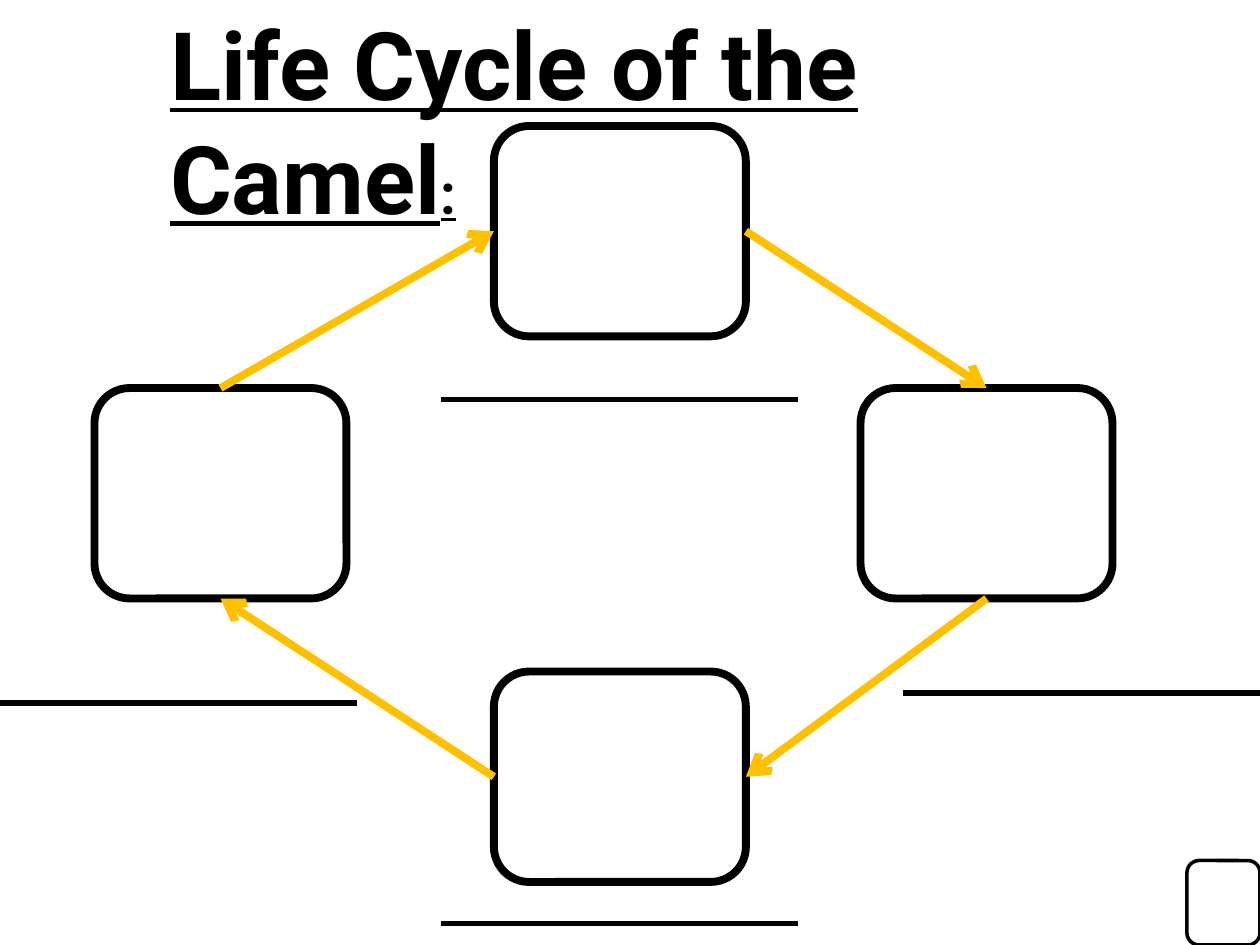
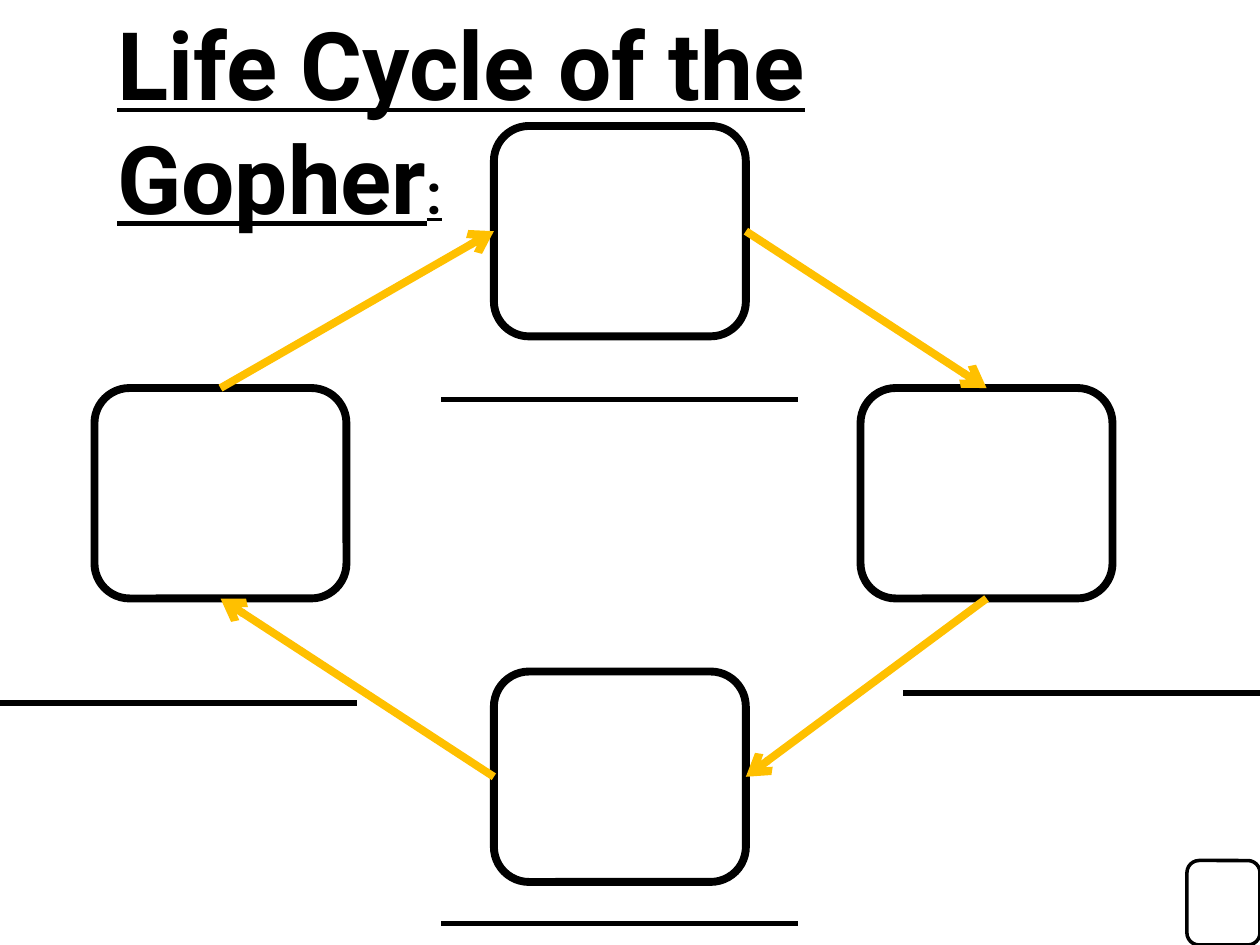
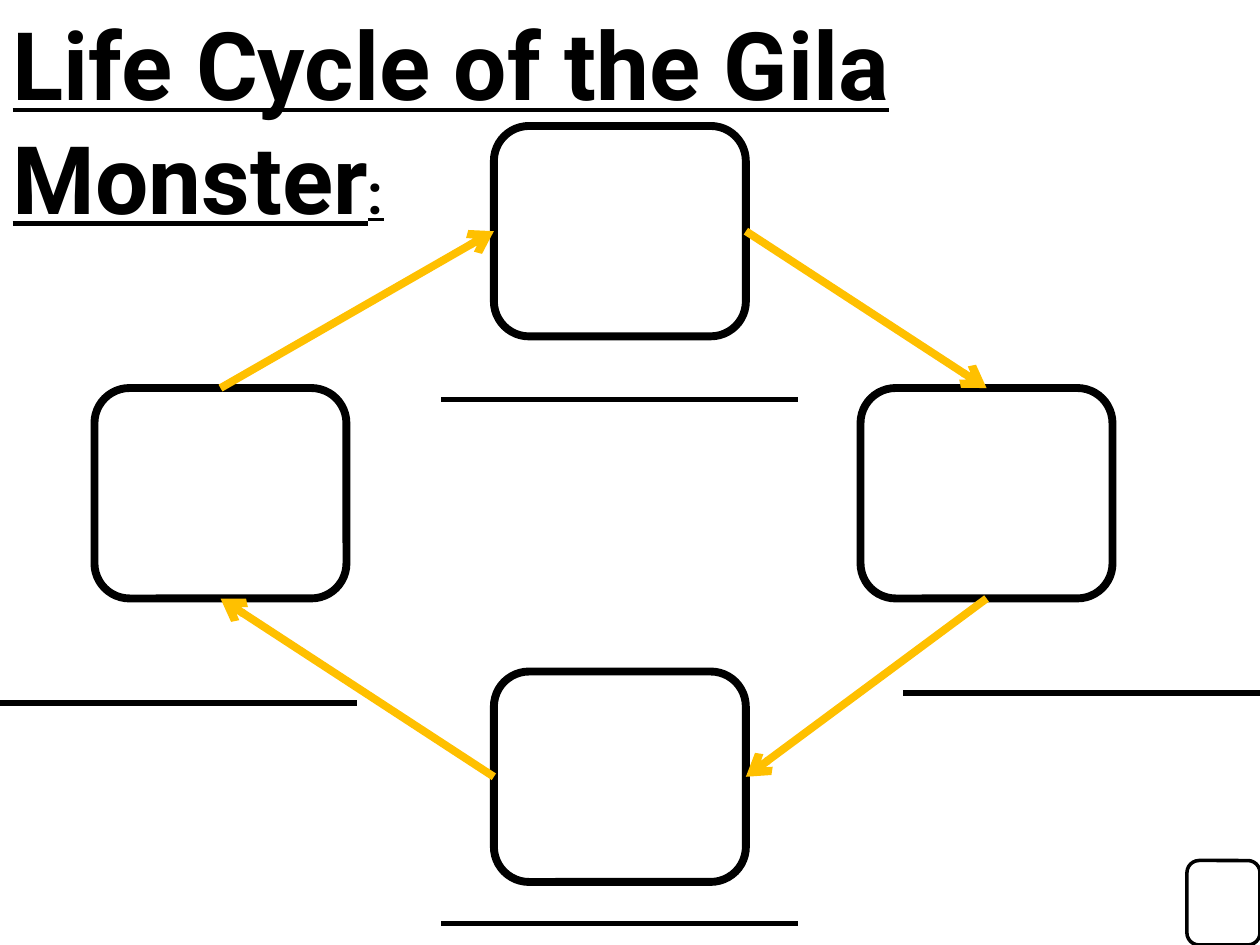
from pptx import Presentation
from pptx.dml.color import RGBColor
from pptx.enum.shapes import MSO_CONNECTOR, MSO_SHAPE
from pptx.enum.text import MSO_ANCHOR, MSO_AUTO_SIZE, PP_ALIGN
from pptx.oxml.ns import qn
from pptx.util import Inches, Pt
from lxml import etree

# Shared style
FONT = "Roboto"
BLACK, WHITE, GOLD = "000000", "FFFFFF", "FFC000"
BOX_W, BOX_H = 2, 1.67
TOP, LEFT, BOTTOM, RIGHT = range(4)  # connection sites of a rounded rectangle

# Title text, left edge and width of the title
TITLES = [
    ("Life Cycle of the Camel", 1.25, 7.72),
    ("Life Cycle of the Gopher", 0.83, 8.2),
    ("Life Cycle of the Gila Monster", 0, 10.09),
]
# Stage boxes: left, top
STAGES = {"top": (3.92, 1), "right": (6.83, 3.08),
          "left": (0.75, 3.08), "bottom": (3.92, 5.33)}
# Arrows clockwise: from stage and site, to stage and site
ARROWS = [
    ("top", RIGHT, "right", TOP),
    ("right", BOTTOM, "bottom", RIGHT),
    ("bottom", LEFT, "left", BOTTOM),
    ("left", TOP, "top", LEFT),
]
# Answer lines: left, top
ANSWER_LINES = [(3.5, 3.17), (7.17, 5.5), (3.5, 7.33), (0, 5.58)]
ANSWER_W = 2.83


def rgb(color):
    return RGBColor.from_string(color)


def add_line(s, x1, y1, x2, y2, color, width):
    line = s.shapes.add_connector(MSO_CONNECTOR.STRAIGHT, Inches(x1), Inches(y1),
                                  Inches(x2), Inches(y2))
    line.line.color.rgb = rgb(color)
    line.line.width = Pt(width)
    etree.SubElement(line._element.spPr, qn("a:effectLst"))
    return line


prs = Presentation()
prs.slide_width, prs.slide_height = Inches(10), Inches(7.5)

for title, title_x, title_w in TITLES:
    s = prs.slides.add_slide(prs.slide_layouts[5])

    # Title
    sp = s.shapes.title
    sp.left, sp.top = Inches(title_x), Inches(0)
    sp.width, sp.height = Inches(title_w), Inches(1.01)
    tf = sp.text_frame
    tf.word_wrap = True
    tf.auto_size = MSO_AUTO_SIZE.NONE
    tf.vertical_anchor = MSO_ANCHOR.TOP
    p = tf.paragraphs[0]
    p.alignment = PP_ALIGN.LEFT
    for text, size in [(title, 54), (":", 32)]:
        r = p.add_run()
        r.text = text
        r.font.name = FONT
        r.font.size = Pt(size)
        r.font.bold = r.font.underline = True
        r.font.color.rgb = rgb(BLACK)

    # Stage boxes, and the small box in the corner
    boxes = {name: (x, y, BOX_W, BOX_H, 4.5) for name, (x, y) in STAGES.items()}
    boxes["corner"] = (9.42, 6.83, 0.58, 0.67, 2)
    stages = {}
    for name, (x, y, w, h, border) in boxes.items():
        sp = s.shapes.add_shape(MSO_SHAPE.ROUNDED_RECTANGLE, Inches(x), Inches(y),
                                Inches(w), Inches(h))
        sp.shadow.inherit = False
        sp.fill.solid()
        sp.fill.fore_color.rgb = rgb(WHITE)
        sp.line.color.rgb = rgb(BLACK)
        sp.line.width = Pt(border)
        stages[name] = sp

    # Arrows from stage to stage
    for start, start_site, end, end_site in ARROWS:
        arrow = add_line(s, 0, 0, 1, 1, GOLD, 4.5)
        arrow.begin_connect(stages[start], start_site)
        arrow.end_connect(stages[end], end_site)
        etree.SubElement(arrow.line._get_or_add_ln(), qn("a:tailEnd"), type="arrow")

    # Answer lines
    for x, y in ANSWER_LINES:
        add_line(s, x, y, x + ANSWER_W, y, BLACK, 3)

prs.save("out.pptx")
